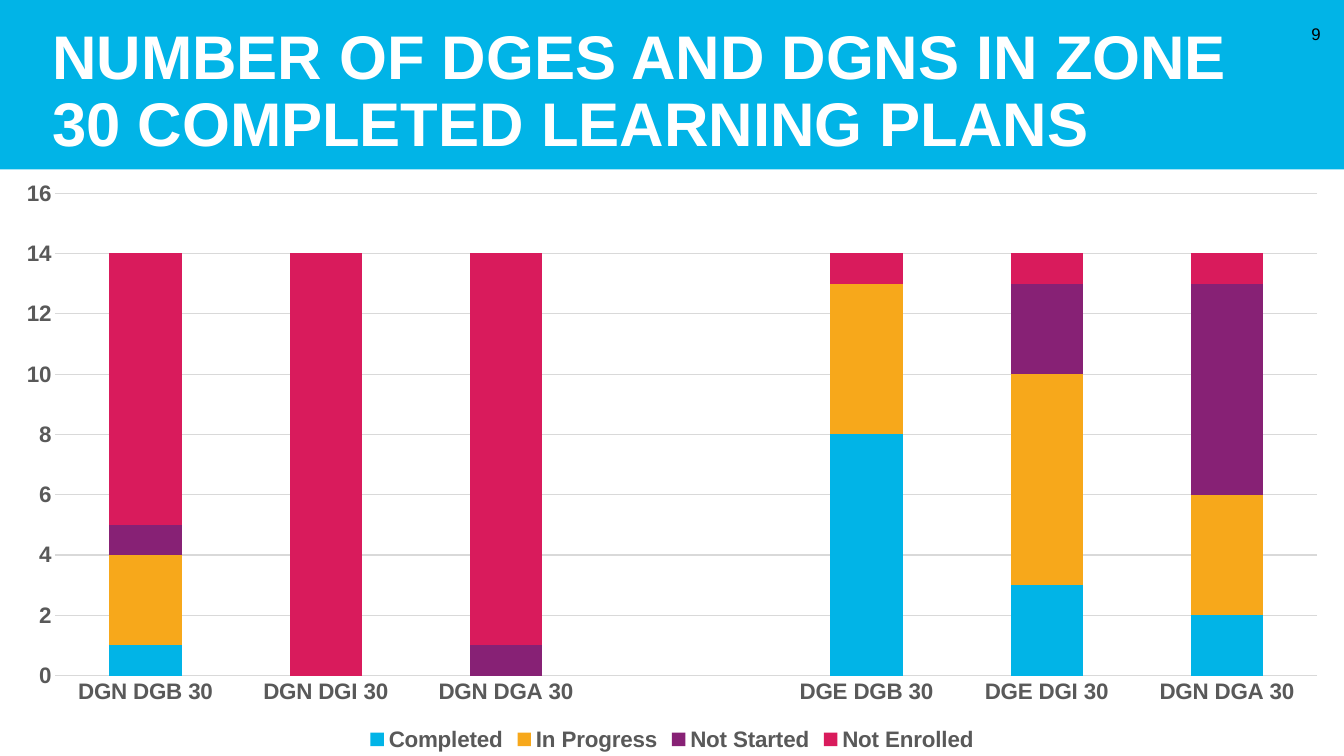
from pptx import Presentation
from pptx.chart.data import CategoryChartData
from pptx.dml.color import RGBColor
from pptx.enum.chart import XL_CHART_TYPE, XL_LEGEND_POSITION, XL_TICK_MARK
from pptx.enum.shapes import MSO_SHAPE
from pptx.enum.text import MSO_ANCHOR, MSO_AUTO_SIZE, PP_ALIGN
from pptx.util import Pt

RECTANGLE = MSO_SHAPE.RECTANGLE
STACKED = XL_CHART_TYPE.COLUMN_STACKED
LEGEND_BOTTOM = XL_LEGEND_POSITION.BOTTOM
NO_TICK = XL_TICK_MARK.NONE
MIDDLE, BOTTOM = MSO_ANCHOR.MIDDLE, MSO_ANCHOR.BOTTOM
LEFT, RIGHT = PP_ALIGN.LEFT, PP_ALIGN.RIGHT
NO_AUTOFIT = MSO_AUTO_SIZE.NONE

TITLE_ONLY = 5
SLIDE_WIDTH, SLIDE_HEIGHT, BANNER_HEIGHT = 960, 540, 121
FONT = "Arial"
SKY, WHITE, BLACK, GREY, GRID = "01B4E7", "FFFFFF", "000000", "595959", "D9D9D9"

PLANS = ["DGN DGB 30", "DGN DGI 30", "DGN DGA 30", "",
         "DGE DGB 30", "DGE DGI 30", "DGN DGA 30"]
STATUSES = [
    ("Completed", SKY, [1, None, None, None, 8, 3, 2]),
    ("In Progress", "F7A81B", [3, None, None, None, 5, 7, 4]),
    ("Not Started", "872175", [1, None, 1, None, 0, 3, 7]),
    ("Not Enrolled", "D91B5C", [9, 14, 13, None, 1, 1, 1]),
]


def rgb(value):
    """Return the colour for a hex string."""
    return RGBColor.from_string(value)


def style_font(font, size, color, bold):
    """Set typeface, size, colour and weight of a font."""
    font.name = FONT
    font.size = Pt(size)
    font.bold = bold
    font.color.rgb = rgb(color)


def style_line(line, color):
    """Give a chart line its colour and thin width."""
    line.color.rgb = rgb(color)
    line.width = Pt(0.75)


def write_line(frame, text, size, color, bold, align, anchor):
    """Write one styled run into a text frame."""
    frame.word_wrap = True
    frame.auto_size = NO_AUTOFIT
    frame.vertical_anchor = anchor
    paragraph = frame.paragraphs[0]
    paragraph.alignment = align
    run = paragraph.add_run()
    run.text = text
    style_font(run.font, size, color, bold)


def add_heading(slide, text):
    """Place the title over a full-width banner."""
    title = slide.shapes.title
    banner = slide.shapes.add_shape(
        RECTANGLE, Pt(0), Pt(0), Pt(SLIDE_WIDTH), Pt(BANNER_HEIGHT))
    banner.shadow.inherit = False
    banner.fill.solid()
    banner.fill.fore_color.rgb = rgb(SKY)
    banner.line.fill.background()
    title.element.addprevious(banner.element)

    title.left, title.top = Pt(30), Pt(0)
    title.width, title.height = Pt(906), Pt(BANNER_HEIGHT)
    frame = title.text_frame
    frame.margin_left = frame.margin_right = frame.margin_bottom = Pt(7.2)
    frame.margin_top = Pt(0)
    write_line(frame, text, 44, WHITE, True, LEFT, BOTTOM)
    frame.paragraphs[0].line_spacing = 0.9


def add_page_number(slide, number):
    """Write the page number in the top right corner."""
    box = slide.shapes.add_textbox(Pt(917), Pt(9.4), Pt(33.4), Pt(28.8))
    write_line(box.text_frame, number, 12, BLACK, False, RIGHT, MIDDLE)


def style_axis(axis):
    """Remove tick marks and style the labels of an axis."""
    axis.major_tick_mark = axis.minor_tick_mark = NO_TICK
    style_font(axis.tick_labels.font, 16, GREY, True)


def add_status_chart(slide):
    """Add the stacked columns of learning plan statuses."""
    data = CategoryChartData()
    data.categories = PLANS
    for status, _, counts in STATUSES:
        data.add_series(status, counts)
    chart = slide.shapes.add_chart(
        STACKED, Pt(0), Pt(BANNER_HEIGHT), Pt(SLIDE_WIDTH),
        Pt(SLIDE_HEIGHT - BANNER_HEIGHT), data).chart
    style_font(chart.font, 10, BLACK, False)
    chart.has_title = False
    chart.has_legend = True
    chart.legend.position = LEGEND_BOTTOM
    chart.legend.include_in_layout = False
    style_font(chart.legend.font, 16, GREY, True)

    style_axis(chart.category_axis)
    style_line(chart.category_axis.format.line, GRID)
    count_axis = chart.value_axis
    style_axis(count_axis)
    count_axis.format.line.fill.background()
    count_axis.minimum_scale, count_axis.maximum_scale = 0, 16
    count_axis.major_unit = 2
    count_axis.has_major_gridlines = True
    style_line(count_axis.major_gridlines.format.line, GRID)

    plot = chart.plots[0]
    plot.gap_width, plot.overlap = 150, 100
    plot.vary_by_categories = False
    for series, (_, color, _) in zip(plot.series, STATUSES):
        series.format.fill.solid()
        series.format.fill.fore_color.rgb = rgb(color)


def main():
    """Build and save the slide."""
    deck = Presentation()
    deck.slide_width, deck.slide_height = Pt(SLIDE_WIDTH), Pt(SLIDE_HEIGHT)
    slide = deck.slides.add_slide(deck.slide_layouts[TITLE_ONLY])
    add_heading(slide, "NUMBER OF DGES AND DGNS IN ZONE 30 COMPLETED LEARNING PLANS")
    add_page_number(slide, "9")
    add_status_chart(slide)
    deck.save("out.pptx")


if __name__ == "__main__":
    main()
